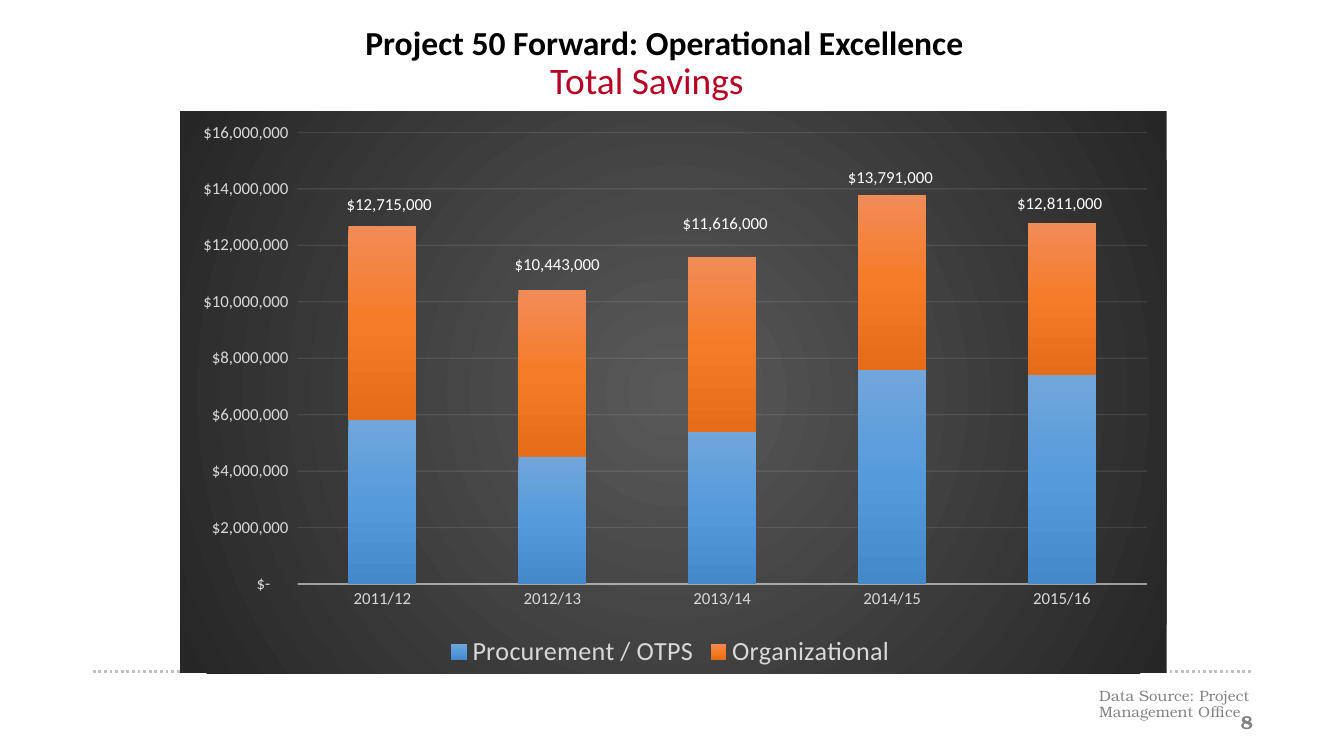
from lxml.etree import SubElement
from pptx import Presentation
from pptx.chart.data import CategoryChartData
from pptx.dml.color import RGBColor
from pptx.enum.chart import XL_CHART_TYPE, XL_LEGEND_POSITION, XL_TICK_MARK
from pptx.enum.dml import MSO_LINE
from pptx.enum.shapes import MSO_CONNECTOR
from pptx.enum.text import MSO_ANCHOR, PP_ALIGN
from pptx.oxml import parse_xml
from pptx.oxml.ns import nsdecls, qn
from pptx.util import Inches, Pt

# Content
TITLE = "Project 50 Forward: Operational Excellence"
SUBTITLE = "Total Savings"
SOURCE = "Data Source: Project Management Office"
PAGE_NUMBER = "8"
YEARS = ["2011/12", "2012/13", "2013/14", "2014/15", "2015/16"]
SAVINGS = {
    "Procurement / OTPS": [5800000, 4500000, 5400000, 7600000, 7400000],
    "Organizational ": [6900000, 5900000, 6200000, 6200000, 5400000],
}
# Total of each year with the left and top of its label, in percent of the slide
TOTALS = [("$12,715,000", 21.7, 24.73), ("$10,443,000", 34.2, 32.74),
          ("$11,616,000", 46.7, 27.25), ("$13,791,000", 59, 21.17),
          ("$12,811,000", 71.6, 24.56)]
DOLLARS = r'_("$"* #,##0_);_("$"* \(#,##0\);_("$"* "-"??_);_(@_)'

# Style
COLORS = {"black": "000000", "white": "FFFFFF", "red": "B60225", "gray": "828383",
          "rule": "C0C0C0", "chart text": "D9D9D9", "chart line": "F2F2F2"}
SERIES_STOPS = [
    [(0, "71A6DB"), (50, "559BDB"), (100, "448ACA")],
    [(0, "F18C57"), (50, "F67B28"), (100, "E56C19")],
]
BACKDROP_STOPS = [(0, "595959"), (100, "262626")]
LINEAR = '<a:lin ang="5400000" scaled="0"/>'
RADIAL = '<a:path path="circle"><a:fillToRect l="50000" t="50000" r="50000" b="50000"/></a:path>'
SANS, SERIF = "Calibri", "TeX Gyre Bonum"

# Places: left, top, width, height in percent of the slide
TITLE_BOX = (26.2, 2.67, 52.5, 9.07)
SUBTITLE_BOX = (15.6, 8.19, 64.1, 6.76)
CHART_BOX = (13.4, 14.75, 73.4, 74.3)
SOURCE_BOX = (80.8, 90.21, 17.5, 4.98)
NUMBER_BOX = (71.7, 92.88, 22.5, 5.34)
RULE_LEFT, RULE_RIGHT, RULE_TOP = 6.9, 93.2, 88.79
LABEL_WIDTH, LABEL_HEIGHT = 14.5, 4.45
# Plot area in percent of the chart
PLOT = {"x": 11.9, "y": 3.75, "w": 86.1, "h": 80.4}

presentation = Presentation()
presentation.slide_width = Inches(10)
presentation.slide_height = presentation.slide_width * 9 // 16
slide = presentation.slides.add_slide(presentation.slide_layouts[6])


def across(share):
    return int(presentation.slide_width * share / 100)


def down(share):
    return int(presentation.slide_height * share / 100)


def place(box):
    left, top, width, height = box
    return across(left), down(top), across(width), down(height)


def color(name):
    return RGBColor.from_string(COLORS[name])


def add_text(text, box, size=9, font=SANS, ink="white", bold=False, align=PP_ALIGN.LEFT,
             anchor=MSO_ANCHOR.TOP, spacing=1.0, insets=(0.1, 0.05, 0.1, 0.05)):
    shape = slide.shapes.add_textbox(*place(box))
    frame = shape.text_frame
    frame.word_wrap = True
    frame.vertical_anchor = anchor
    (frame.margin_left, frame.margin_top,
     frame.margin_right, frame.margin_bottom) = [Inches(inset) for inset in insets]
    paragraph = frame.paragraphs[0]
    paragraph.alignment = align
    paragraph.line_spacing = spacing
    run = paragraph.add_run()
    run.text = text
    run.font.size, run.font.name, run.font.bold = Pt(size), font, bold
    run.font.color.rgb = color(ink)


def gradient(stops, direction):
    marks = "".join(f'<a:gs pos="{position * 1000}"><a:srgbClr val="{value}"/></a:gs>'
                    for position, value in stops)
    return parse_xml(f'<a:gradFill {nsdecls("a")} rotWithShape="1">'
                     f"<a:gsLst>{marks}</a:gsLst>{direction}</a:gradFill>")


def style_chart_line(line, width, opacity):
    line.width = Pt(width)
    line.color.rgb = color("chart line")
    for tint in line._get_or_add_ln().iter(qn("a:srgbClr")):
        SubElement(tint, qn("a:alpha"), val=str(opacity * 1000))


def style_font(font, size, ink="chart text"):
    font.size, font.name = Pt(size), SANS
    font.color.rgb = color(ink)


# Dotted rule above the footer
rule = slide.shapes.add_connector(MSO_CONNECTOR.STRAIGHT, across(RULE_LEFT), down(RULE_TOP),
                                  across(RULE_RIGHT), down(RULE_TOP))
rule.line.color.rgb = color("rule")
rule.line.width = Pt(1.5)
rule.line.dash_style = MSO_LINE.ROUND_DOT
SubElement(rule._element.spPr, qn("a:effectLst"))

# Stacked savings chart
data = CategoryChartData(number_format=DOLLARS)
data.categories = YEARS
for name, values in SAVINGS.items():
    data.add_series(name, values)
chart = slide.shapes.add_chart(XL_CHART_TYPE.COLUMN_STACKED, *place(CHART_BOX), data).chart
style_font(chart.font, 10, "black")
chart.has_title = False
chart.has_legend = True
chart.legend.position = XL_LEGEND_POSITION.BOTTOM
chart.legend.include_in_layout = False
style_font(chart.legend.font, 14)

plot = chart.plots[0]
plot.gap_width, plot.overlap, plot.vary_by_categories = 150, 100, False
for series, stops in zip(plot.series, SERIES_STOPS):
    series._element.get_or_add_spPr().append(gradient(stops, LINEAR))

# Axes
for axis in (chart.category_axis, chart.value_axis):
    axis.major_tick_mark = axis.minor_tick_mark = XL_TICK_MARK.NONE
    style_font(axis.tick_labels.font, 9)
style_chart_line(chart.category_axis.format.line, 1, 54)
values_axis = chart.value_axis
values_axis.minimum_scale, values_axis.maximum_scale = 0, 16000000
values_axis.major_unit = 2000000
values_axis.tick_labels.number_format = DOLLARS
values_axis.tick_labels.number_format_is_linked = False
values_axis.format.line.fill.background()
style_chart_line(values_axis.major_gridlines.format.line, 0.75, 10)

# Plot placement and chart backdrop
plot_area = chart._chartSpace.chart.plotArea
for old_layout in plot_area.findall(qn("c:layout")):
    plot_area.remove(old_layout)
sizes = "".join(f'<c:{key} val="{share / 100:.4f}"/>' for key, share in PLOT.items())
plot_area.insert(0, parse_xml(
    f'<c:layout {nsdecls("c")}><c:manualLayout><c:layoutTarget val="inner"/>'
    f'<c:xMode val="edge"/><c:yMode val="edge"/>{sizes}</c:manualLayout></c:layout>'))
backdrop = parse_xml(f'<c:spPr {nsdecls("c", "a")}><a:ln><a:noFill/></a:ln></c:spPr>')
backdrop.insert(0, gradient(BACKDROP_STOPS, RADIAL))
chart._chartSpace.chart.addnext(backdrop)

# Yearly totals above the columns
for total, left, top in TOTALS:
    add_text(total, (left, top, LABEL_WIDTH, LABEL_HEIGHT), align=PP_ALIGN.CENTER)

# Headings and footer
add_text(TITLE, TITLE_BOX, size=18, ink="black", bold=True, spacing=0.9)
add_text(SUBTITLE, SUBTITLE_BOX, size=20, ink="red", align=PP_ALIGN.CENTER, spacing=0.9,
         insets=(0.1, 0, 0, 0))
add_text(SOURCE, SOURCE_BOX, size=8, font=SERIF, ink="gray", spacing=0.9)
add_text(PAGE_NUMBER, NUMBER_BOX, size=10, font=SERIF, ink="gray", bold=True,
         align=PP_ALIGN.RIGHT, anchor=MSO_ANCHOR.MIDDLE)

presentation.save("out.pptx")
